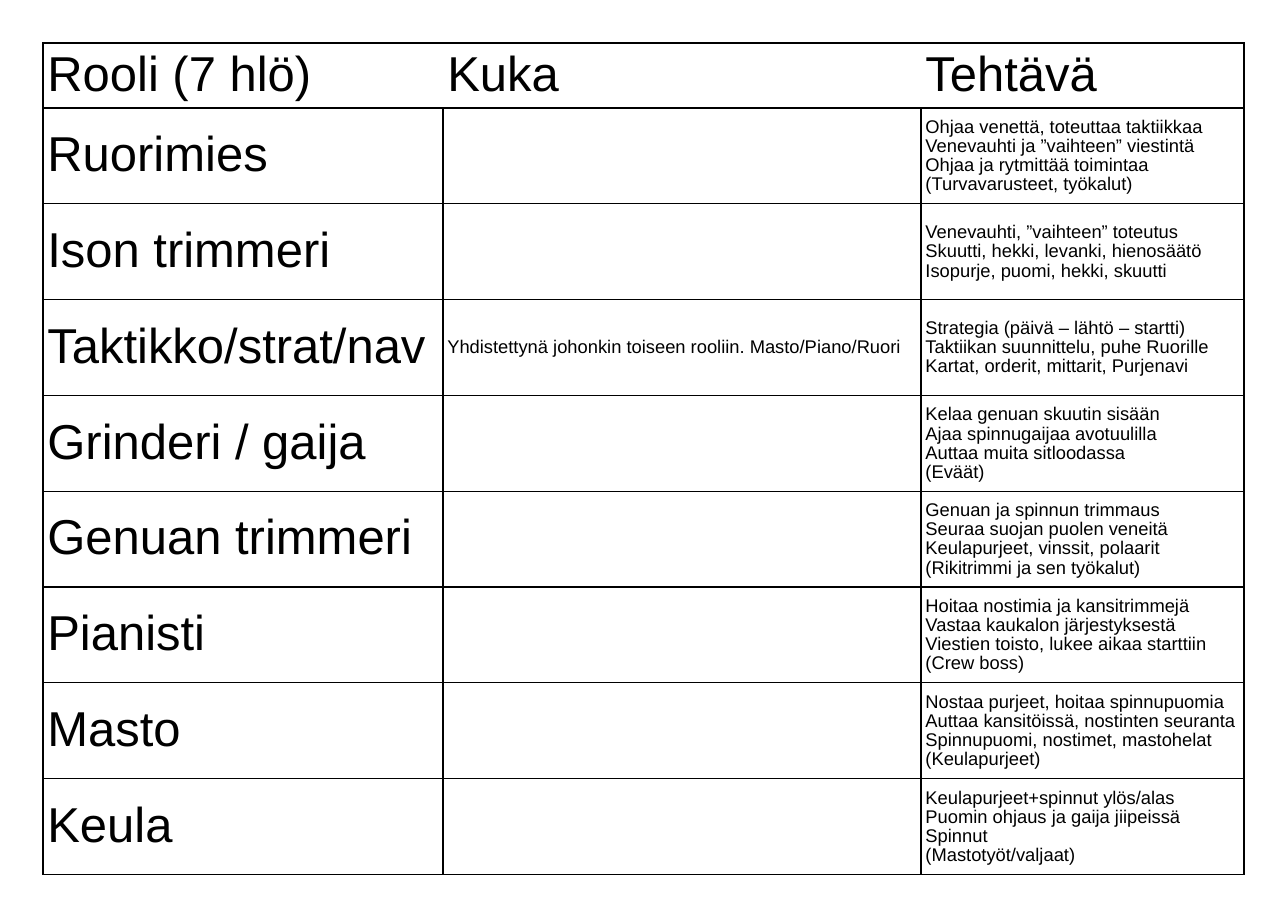
from lxml import etree
from pptx import Presentation
from pptx import util as u
from pptx.dml.color import RGBColor
from pptx.enum import text
from pptx.oxml import ns

BLACK = RGBColor(0x00, 0x00, 0x00)
FONT = "Arial"
PAGE_WIDTH, PAGE_HEIGHT = 11.69, 8.27
MARGIN = 0.39
COLUMN_WIDTHS = (3.63, 4.34, 2.93)
HEADER_HEIGHT, ROLE_HEIGHT = 0.59, 0.87
TITLE_SIZE, DETAIL_SIZE = 32, 12
FRAME, GRID = 1.42, 1

HEADINGS = ("Rooli (7 hlö)", "Kuka", "Tehtävä")
ROLES = (
    ("Ruorimies", "", (
        "Ohjaa venettä, toteuttaa taktiikkaa",
        "Venevauhti ja ”vaihteen” viestintä",
        "Ohjaa ja rytmittää toimintaa",
        "(Turvavarusteet, työkalut)")),
    ("Ison trimmeri", "", (
        "Venevauhti, ”vaihteen” toteutus",
        "Skuutti, hekki, levanki, hienosäätö",
        "Isopurje, puomi, hekki, skuutti")),
    ("Taktikko/strat/nav", "Yhdistettynä johonkin toiseen rooliin. Masto/Piano/Ruori", (
        "Strategia (päivä – lähtö – startti)",
        "Taktiikan suunnittelu, puhe Ruorille",
        "Kartat, orderit, mittarit, Purjenavi")),
    ("Grinderi / gaija", "", (
        "Kelaa genuan skuutin sisään",
        "Ajaa spinnugaijaa avotuulilla",
        "Auttaa muita sitloodassa",
        "(Eväät)")),
    ("Genuan trimmeri", "", (
        "Genuan ja spinnun trimmaus",
        "Seuraa suojan puolen veneitä",
        "Keulapurjeet, vinssit, polaarit",
        "(Rikitrimmi ja sen työkalut)")),
    ("Pianisti", "", (
        "Hoitaa nostimia ja kansitrimmejä",
        "Vastaa kaukalon järjestyksestä",
        "Viestien toisto, lukee aikaa starttiin",
        "(Crew boss)")),
    ("Masto", "", (
        "Nostaa purjeet, hoitaa spinnupuomia",
        "Auttaa kansitöissä, nostinten seuranta",
        "Spinnupuomi, nostimet, mastohelat",
        "(Keulapurjeet)")),
    ("Keula", "", (
        "Keulapurjeet+spinnut ylös/alas",
        "Puomin ohjaus ja gaija jiipeissä",
        "Spinnut",
        "(Mastotyöt/valjaat)")),
)


def set_borders(cell, left, right, top, bottom):
    """Draw the four edges with widths in points; a width of 0 hides the edge."""
    properties = cell._tc.get_or_add_tcPr()
    for side, width in zip("LRTB", (left, right, top, bottom)):
        line = etree.SubElement(properties, ns.qn(f"a:ln{side}"), w=str(u.Pt(width)))
        if width:
            fill = etree.SubElement(line, ns.qn("a:solidFill"))
            etree.SubElement(fill, ns.qn("a:srgbClr"), val=str(BLACK))
        else:
            etree.SubElement(line, ns.qn("a:noFill"))


def write_cell(cell, lines, size):
    cell.fill.background()
    cell.vertical_anchor = text.MSO_ANCHOR.MIDDLE
    cell.margin_left = cell.margin_right = cell.margin_bottom = u.Inches(0.04)
    cell.margin_top = u.Inches(0.05)
    frame = cell.text_frame
    for index, line in enumerate(lines):
        para = frame.add_paragraph() if index else frame.paragraphs[0]
        para.line_spacing = 0.93
        span = para.add_run()
        span.text = line
        span.font.name = FONT
        span.font.size = u.Pt(size)
        span.font.color.rgb = BLACK


def add_role_table(page):
    row_heights = [HEADER_HEIGHT] + [ROLE_HEIGHT] * len(ROLES)
    table = page.shapes.add_table(
        len(row_heights), len(COLUMN_WIDTHS), u.Inches(MARGIN), u.Inches(MARGIN),
        u.Inches(sum(COLUMN_WIDTHS)), u.Inches(sum(row_heights))).table
    table.first_row = table.horz_banding = False
    for column, width in zip(table.columns, COLUMN_WIDTHS):
        column.width = u.Inches(width)
    for row, height in zip(table.rows, row_heights):
        row.height = u.Inches(height)
    return table


def fill_header(table):
    last = len(HEADINGS) - 1
    for column, heading in enumerate(HEADINGS):
        cell = table.cell(0, column)
        set_borders(cell, FRAME if column == 0 else 0,
                    FRAME if column == last else 0, FRAME, GRID)
        write_cell(cell, [heading], TITLE_SIZE)


def fill_roles(table):
    for row, (role, person, duties) in enumerate(ROLES, start=1):
        contents = (([role], TITLE_SIZE),
                    ([person] if person else [], DETAIL_SIZE),
                    (duties, DETAIL_SIZE))
        for column, (lines, size) in enumerate(contents):
            cell = table.cell(row, column)
            set_borders(cell, GRID, GRID, GRID, GRID)
            write_cell(cell, lines, size)


def main():
    deck = Presentation()
    deck.slide_width = u.Inches(PAGE_WIDTH)
    deck.slide_height = u.Inches(PAGE_HEIGHT)
    page = deck.slides.add_slide(deck.slide_layouts[6])
    table = add_role_table(page)
    fill_header(table)
    fill_roles(table)
    deck.save("out.pptx")


if __name__ == "__main__":
    main()
